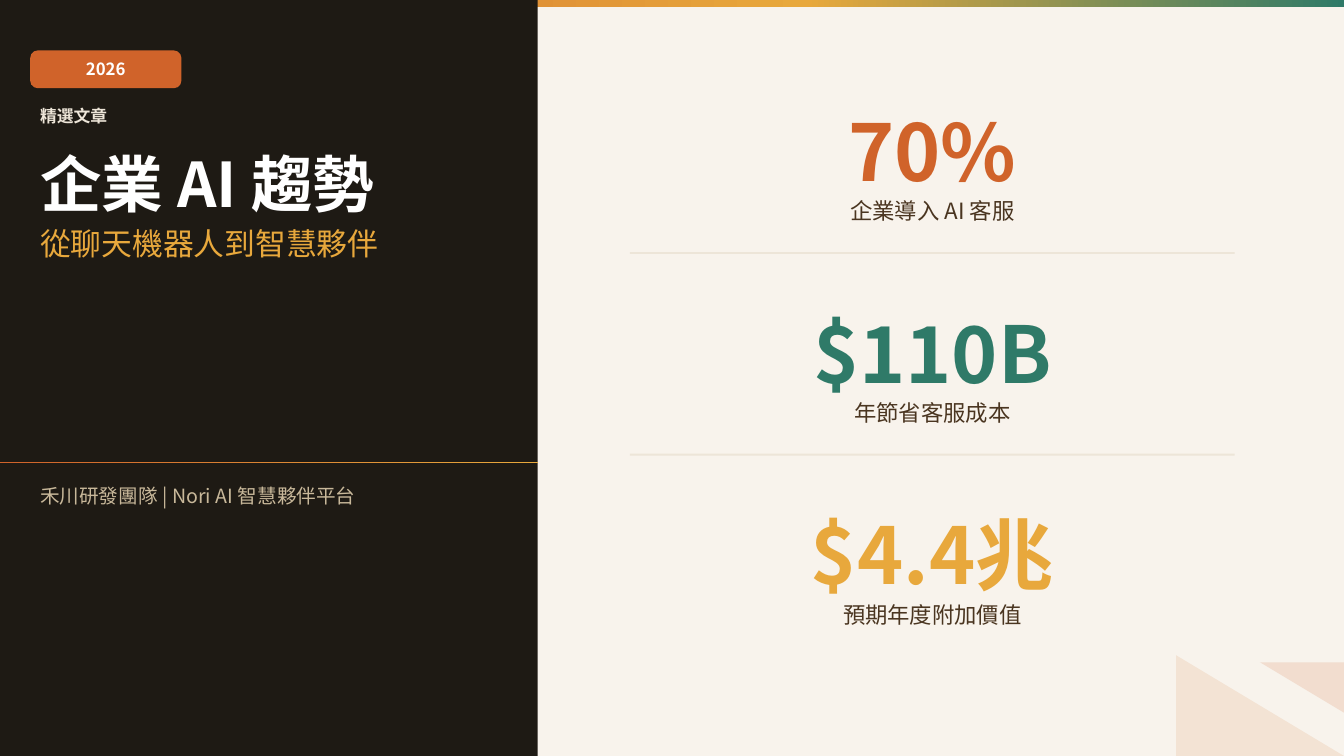
from copy import deepcopy
from dataclasses import dataclass

from lxml import etree
from pptx import Presentation
from pptx.dml.color import RGBColor
from pptx.enum.shapes import MSO_SHAPE
from pptx.enum.text import MSO_ANCHOR, PP_ALIGN
from pptx.oxml.ns import qn
from pptx.util import Inches, Pt

RECTANGLE = MSO_SHAPE.RECTANGLE
ROUNDED = MSO_SHAPE.ROUNDED_RECTANGLE
TRIANGLE = MSO_SHAPE.RIGHT_TRIANGLE
TOP, MIDDLE = MSO_ANCHOR.TOP, MSO_ANCHOR.MIDDLE
LEFT, CENTER = PP_ALIGN.LEFT, PP_ALIGN.CENTER

FONT = "Noto Sans CJK SC"
WIDTH, HEIGHT = Inches(13.333), Inches(7.5)
COLUMN, ROW = WIDTH / 160, HEIGHT / 30

ORANGE, AMBER, GREEN = "D0632A", "E8A83C", "2F7A68"
CREAM, SAND, INK = "F8F3EC", "EDE5D8", "1E1A14"
WHITE, BROWN, TAN = "FFFFFF", "4A3520", "C8B89A"


@dataclass
class Area:
    """A place on the slide in grid columns and rows."""
    column: float
    row: float
    columns: float
    rows: float

    def lengths(self) -> list[int]:
        return [round(self.column * COLUMN), round(self.row * ROW),
                round(self.columns * COLUMN), round(self.rows * ROW)]


@dataclass
class Line:
    text: str
    size: float
    color: str
    bold: bool = False
    before: float = 0


@dataclass
class Stat:
    value: str
    label: str
    color: str


STATS = [
    Stat("70%", "企業導入 AI 客服", ORANGE),
    Stat("$110B", "年節省客服成本", GREEN),
    Stat("$4.4兆", "預期年度附加價值", AMBER),
]
STAT_TOP, STAT_STEP, STAT_ROWS = 3, 8, 7


def rgb(color: str) -> RGBColor:
    return RGBColor.from_string(color)


def add_box(slide, kind, area: Area, color: str = "", opacity: int = 100):
    shape = slide.shapes.add_shape(kind, *area.lengths())
    shape.shadow.inherit = False
    shape.line.fill.background()
    if color:
        shape.fill.solid()
        shape.fill.fore_color.rgb = rgb(color)
    if opacity < 100:
        value = shape._element.spPr.find(".//" + qn("a:srgbClr"))
        etree.SubElement(value, qn("a:alpha"), val=str(opacity * 1000))
    return shape


def add_gradient_bar(slide, area: Area, stops: list[tuple[float, str]]) -> None:
    bar = add_box(slide, RECTANGLE, area)
    bar.fill.gradient()
    bar.fill.gradient_angle = 0
    stop_list = bar._element.spPr.find(".//" + qn("a:gsLst"))
    while len(stop_list) < len(stops):
        stop_list.insert(1, deepcopy(stop_list[0]))
    for stop, (position, color) in zip(bar.fill.gradient_stops, stops):
        stop.position = position
        stop.color.rgb = rgb(color)


def write(shape, lines: list[Line], align=LEFT, anchor=TOP) -> None:
    frame = shape.text_frame
    frame.word_wrap = True
    frame.vertical_anchor = anchor
    for index, line in enumerate(lines):
        para = frame.add_paragraph() if index else frame.paragraphs[0]
        para.text = line.text
        para.alignment = align
        if line.before:
            para.space_before = Pt(line.before)
        font = para.font
        font.name, font.size, font.bold = FONT, Pt(line.size), line.bold
        font.color.rgb = rgb(line.color)
        defaults = para._p.pPr.find(qn("a:defRPr"))
        etree.SubElement(defaults, qn("a:ea"), typeface=FONT)


def add_text(slide, area: Area, lines: list[Line], align=LEFT, anchor=TOP) -> None:
    write(slide.shapes.add_textbox(*area.lengths()), lines, align, anchor)


def add_decoration(slide) -> None:
    add_box(slide, TRIANGLE, Area(140, 26, 20, 4), "D4722A", 12)
    add_gradient_bar(slide, Area(0, 0, 160, 0.28),
                     [(0, ORANGE), (0.6, AMBER), (1, GREEN)])
    corner = add_box(slide, TRIANGLE, Area(150, 26.28, 10, 2), ORANGE, 15)
    corner.rotation = 180


def add_title_panel(slide) -> None:
    add_box(slide, RECTANGLE, Area(0, 0, 64, 30), INK)
    add_gradient_bar(slide, Area(0, 18.33, 64, 0.04), [(0, ORANGE), (1, AMBER)])
    badge = add_box(slide, ROUNDED, Area(3.6, 2, 18, 1.5), ORANGE)
    badge.adjustments[0] = 0.2
    write(badge, [Line("2026", 12, WHITE, True)], CENTER, MIDDLE)
    add_text(slide, Area(3.6, 4, 57.6, 14), [
        Line("精選文章", 12, SAND, True),
        Line("企業 AI 趨勢", 44, WHITE, True, before=14),
        Line("從聊天機器人到智慧夥伴", 22, AMBER, before=4),
    ])
    add_text(slide, Area(3.6, 19, 57.6, 3),
             [Line("禾川研發團隊 | Nori AI 智慧夥伴平台", 14, TAN)])


def add_stats(slide) -> None:
    for index, stat in enumerate(STATS):
        top = STAT_TOP + index * STAT_STEP
        add_text(slide, Area(69, top, 84, STAT_ROWS), [
            Line(stat.value, 56, stat.color, True),
            Line(stat.label, 16, BROWN),
        ], CENTER, MIDDLE)
        if index < len(STATS) - 1:
            add_box(slide, RECTANGLE, Area(75, top + STAT_ROWS, 72, 0.08), SAND)


def main() -> None:
    deck = Presentation()
    deck.slide_width, deck.slide_height = WIDTH, HEIGHT
    slide = deck.slides.add_slide(deck.slide_layouts[6])
    slide.background.fill.solid()
    slide.background.fill.fore_color.rgb = rgb(CREAM)
    add_decoration(slide)
    add_title_panel(slide)
    add_stats(slide)
    deck.save("out.pptx")


if __name__ == "__main__":
    main()
